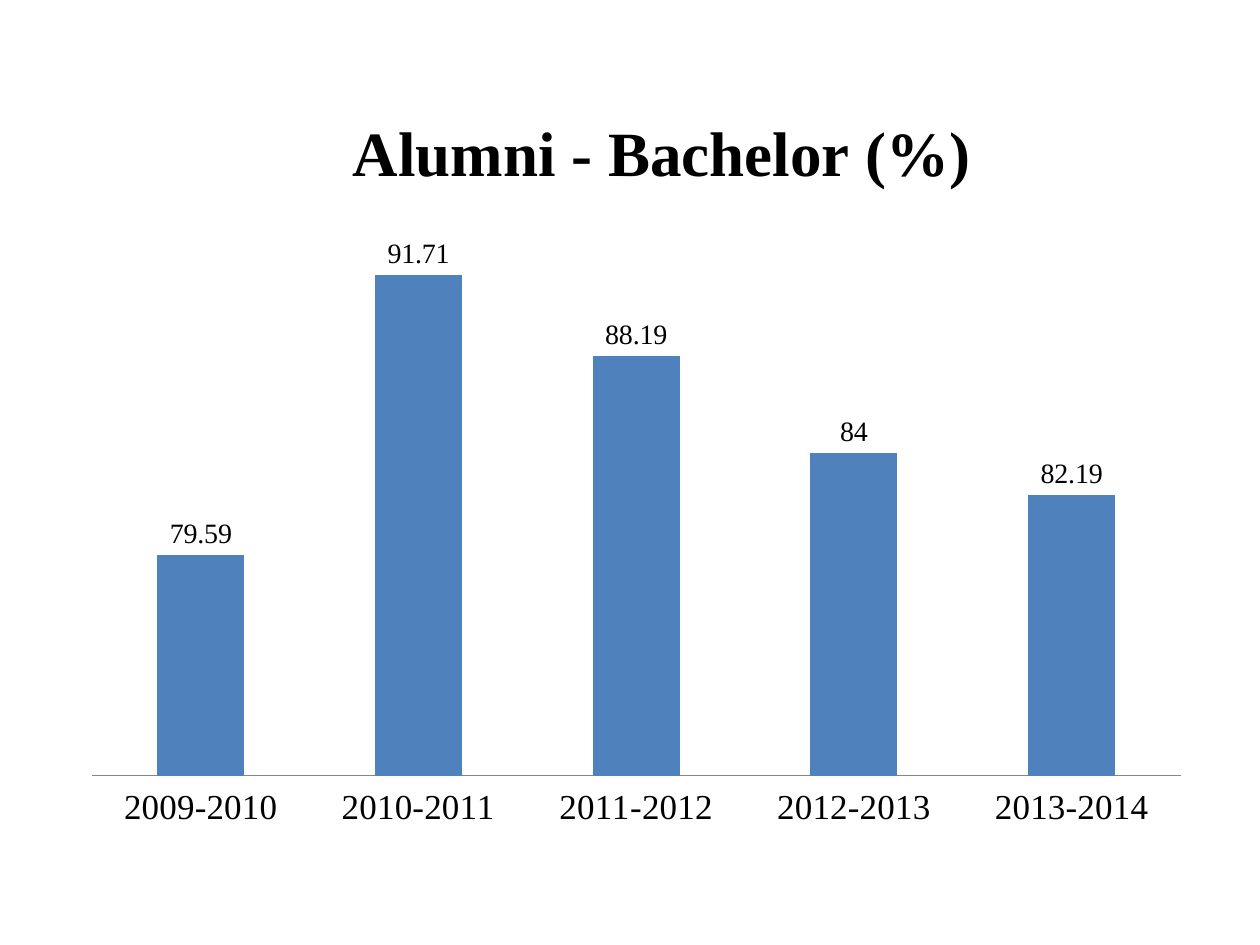
from dataclasses import dataclass

from lxml import etree
from pptx import Presentation
from pptx.chart.data import CategoryChartData
from pptx.dml.color import RGBColor
from pptx.enum.chart import XL_CHART_TYPE, XL_LABEL_POSITION, XL_TICK_LABEL_POSITION, XL_TICK_MARK
from pptx.oxml.ns import qn
from pptx.util import Inches, Pt

COLUMN_CLUSTERED = XL_CHART_TYPE.COLUMN_CLUSTERED
OUTSIDE_END = XL_LABEL_POSITION.OUTSIDE_END
LOW = XL_TICK_LABEL_POSITION.LOW
NO_TICK = XL_TICK_MARK.NONE


@dataclass(frozen=True)
class Theme:
    """Colours, fonts and type sizes of the slide."""

    text: RGBColor = RGBColor(0x00, 0x00, 0x00)
    bar: RGBColor = RGBColor(0x4F, 0x81, 0xBD)
    axis: RGBColor = RGBColor(0x86, 0x86, 0x86)
    base_font: str = "Calibri"
    display_font: str = "Times New Roman"
    base_size: int = 10
    label_size: int = 16
    axis_size: int = 20
    title_size: int = 36


THEME = Theme()
TITLE = "Alumni - Bachelor (%)"
RATES = {
    "2009-2010": 79.59,
    "2010-2011": 91.71,
    "2011-2012": 88.19,
    "2012-2013": 84,
    "2013-2014": 82.19,
}


def format_font(font, size, name=THEME.display_font, bold=False):
    """Apply typeface, size, weight and text colour to a font."""
    font.name = name
    font.size = Pt(size)
    font.bold = bold
    font.color.rgb = THEME.text


def write_text(text_frame, text, **font_format):
    """Write one formatted run of text into a text frame."""
    run = text_frame.paragraphs[0].add_run()
    run.text = text
    format_font(run.font, **font_format)


def set_layout(element, index, **settings):
    """Give a chart element a manual layout as fractions of the chart."""
    for previous in element.findall(qn("c:layout")):
        element.remove(previous)
    layout = etree.Element(qn("c:layout"))
    manual = etree.SubElement(layout, qn("c:manualLayout"))
    for tag, value in settings.items():
        etree.SubElement(manual, qn(f"c:{tag}")).set("val", str(value))
    element.insert(index, layout)


def add_title(chart):
    """Write the chart title and place it above the columns."""
    title = chart.chart_title
    write_text(title.text_frame, TITLE, size=THEME.title_size, bold=True)
    title.include_in_layout = False
    set_layout(title._element, 1, xMode="edge", yMode="edge", x=0.24, y=0.03)


def format_axes(chart):
    """Show the year axis and hide the value axis."""
    years = chart.category_axis
    years.major_tick_mark = NO_TICK
    years.minor_tick_mark = NO_TICK
    years.tick_label_position = LOW
    years.format.line.color.rgb = THEME.axis
    years.format.line.width = Pt(0.75)
    format_font(years.tick_labels.font, THEME.axis_size)
    rates = chart.value_axis
    rates.minimum_scale = 70
    rates.maximum_scale = 95
    rates.has_major_gridlines = False
    rates.visible = False


def format_columns(plot):
    """Colour the columns and label each with its value."""
    plot.gap_width = 150
    plot.overlap = -25
    plot.vary_by_categories = False
    series = plot.series[0]
    series.format.fill.solid()
    series.format.fill.fore_color.rgb = THEME.bar
    series.invert_if_negative = False
    labels = series.data_labels
    labels.show_value = True
    labels.position = OUTSIDE_END
    labels.number_format = "General"
    labels.number_format_is_linked = False
    format_font(labels.font, THEME.label_size)


def add_rate_chart(slide, left, top, width, height):
    """Add the column chart of alumni rates in the given box."""
    data = CategoryChartData()
    data.categories = list(RATES)
    data.add_series("Series 1", list(RATES.values()))
    chart = slide.shapes.add_chart(COLUMN_CLUSTERED, left, top, width, height, data).chart
    chart.has_legend = False
    format_font(chart.font, THEME.base_size, name=THEME.base_font)
    add_title(chart)
    format_axes(chart)
    format_columns(chart.plots[0])
    plot_area = chart._chartSpace.find(f".//{qn('c:plotArea')}")
    set_layout(plot_area, 0, layoutTarget="inner", xMode="edge", yMode="edge",
               x=0.02, y=0.16, w=0.96, h=0.76)


def main():
    """Build the slide and save the presentation."""
    presentation = Presentation()
    presentation.slide_width = Inches(10)
    presentation.slide_height = Inches(7.5)
    slide = presentation.slides.add_slide(presentation.slide_layouts[6])
    add_rate_chart(slide, Inches(0.55), Inches(0.62), Inches(9), Inches(6.02))
    presentation.save("out.pptx")


if __name__ == "__main__":
    main()
